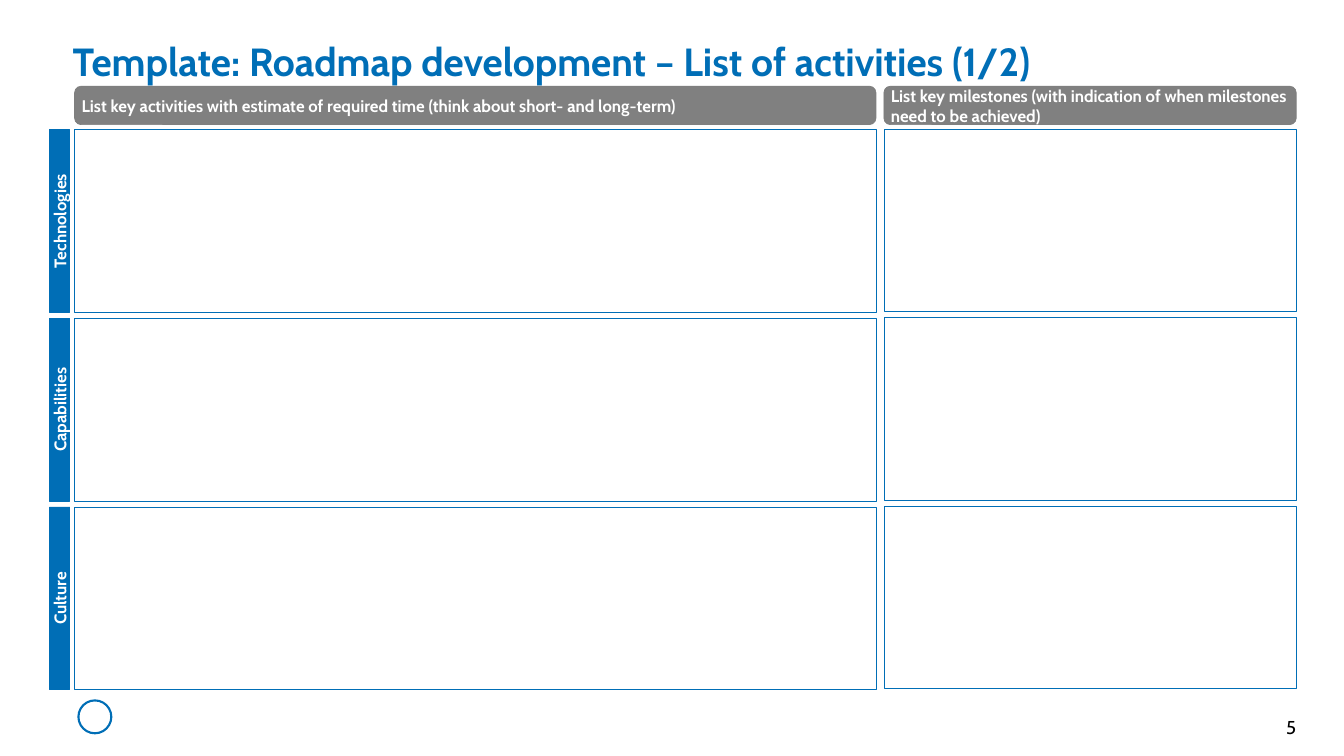
import pptx
import pptx.dml.color
import pptx.enum.shapes
import pptx.enum.text
import pptx.util

Pt = pptx.util.Pt
SHAPES = pptx.enum.shapes.MSO_SHAPE
ALIGN = pptx.enum.text.PP_ALIGN
ANCHOR = pptx.enum.text.MSO_ANCHOR

BLUE, GRAY, GRAY_LINE, WHITE, BLACK = "006EB6", "808080", "7F7F7F", "FFFFFF", "000000"

LABEL_LEFT, LABEL_WIDTH = 35.3, 14.6
HEADER_HEIGHT = 27.4
ROW_TOP, ROW_HEIGHT, ROW_PITCH = 92.7, 130.5, 134.7
ROW_LABELS = ["Technologies", "Capabilities", "Culture"]
# Left, width, upward shift and heading of each column
COLUMNS = [
    (53.3, 572.4, 0,
     "List key activities with estimate of required time (think about short- and long-term)"),
    (631.4, 294.5, 0.6,
     "List key milestones (with indication of when milestones need to be achieved)"),
]


def color(hex_string):
    return pptx.dml.color.RGBColor.from_string(hex_string)


def write_text(shape, text, size, text_color, bold=True, align=ALIGN.LEFT,
               anchor=ANCHOR.MIDDLE, insets=(0, 0), wrap=True, line_spacing=None):
    """Fill the shape with one paragraph; insets are horizontal and vertical."""
    horizontal, vertical = insets
    frame_format = {
        "word_wrap": wrap, "vertical_anchor": anchor,
        "margin_left": Pt(horizontal), "margin_right": Pt(horizontal),
        "margin_top": Pt(vertical), "margin_bottom": Pt(vertical),
    }
    for name, value in frame_format.items():
        setattr(shape.text_frame, name, value)
    paragraph = shape.text_frame.paragraphs[0]
    paragraph.alignment = align
    paragraph.line_spacing = line_spacing
    run = paragraph.add_run()
    run.text = text
    for name, value in {"name": "Cabin", "size": Pt(size), "bold": bold}.items():
        setattr(run.font, name, value)
    run.font.color.rgb = color(text_color)


def add_text(slide, left, top, width, height, text, size, text_color, **text_format):
    box = slide.shapes.add_textbox(Pt(left), Pt(top), Pt(width), Pt(height))
    write_text(box, text, size, text_color, **text_format)


def add_box(slide, kind, left, top, width, height, fill, line, line_width=0.5):
    shape = slide.shapes.add_shape(kind, Pt(left), Pt(top), Pt(width), Pt(height))
    shape.shadow.inherit = False
    shape.fill.solid()
    shape.fill.fore_color.rgb = color(fill)
    shape.line.color.rgb = color(line)
    shape.line.width = Pt(line_width)
    return shape


def add_header(slide, left, top, width, text):
    header = add_box(slide, SHAPES.ROUNDED_RECTANGLE, left, top, width, HEADER_HEIGHT,
                     GRAY, GRAY_LINE)
    write_text(header, text, 12, WHITE, insets=(3.6, 5))


def add_row_label(slide, top, text):
    label = add_box(slide, SHAPES.RECTANGLE, LABEL_LEFT, top, LABEL_WIDTH, ROW_HEIGHT,
                    BLUE, BLUE)
    write_text(label, text, 12, WHITE, align=ALIGN.CENTER)
    label.element.txBody.bodyPr.set("vert", "vert270")


def main():
    presentation = pptx.Presentation()
    presentation.slide_width, presentation.slide_height = Pt(960), Pt(540)
    slide = presentation.slides.add_slide(presentation.slide_layouts[6])

    add_box(slide, SHAPES.OVAL, 56, 500.3, 23.5, 23.5, WHITE, BLUE, 1.5)
    add_text(slide, 909.4, 511.2, 16.5, 16, "5", 13.3, BLACK,
             bold=False, align=ALIGN.RIGHT, wrap=False)
    add_text(slide, 52, 31, 853, 101.5,
             "Template: Roadmap development – List of activities (1/2)", 28, BLUE,
             anchor=ANCHOR.TOP, line_spacing=0.87)

    for row, label in enumerate(ROW_LABELS):
        top = ROW_TOP + row * ROW_PITCH
        add_row_label(slide, top, label)
        for left, width, shift, _ in COLUMNS:
            add_box(slide, SHAPES.RECTANGLE, left, top - shift, width, ROW_HEIGHT,
                    WHITE, BLUE)
    for left, width, _, heading in COLUMNS:
        add_header(slide, left, 61.6, width, heading)

    presentation.save("out.pptx")


if __name__ == "__main__":
    main()
